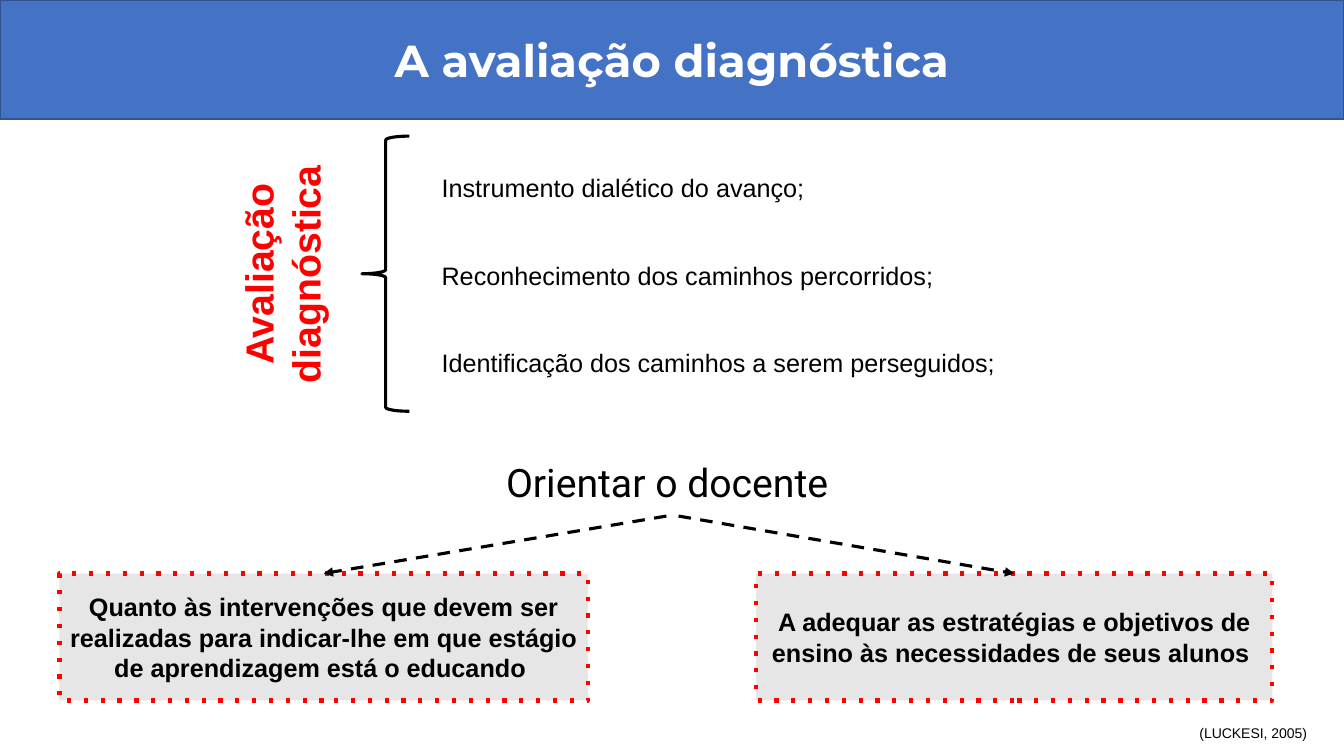
from dataclasses import dataclass

from lxml import etree
from pptx import Presentation
from pptx.dml.color import RGBColor
from pptx.enum.shapes import MSO_CONNECTOR, MSO_SHAPE
from pptx.enum.text import MSO_ANCHOR, MSO_AUTO_SIZE, PP_ALIGN
from pptx.oxml.ns import qn
from pptx.util import Inches, Pt

RECTANGLE, BRACE = MSO_SHAPE.RECTANGLE, MSO_SHAPE.RIGHT_BRACE
STRAIGHT = MSO_CONNECTOR.STRAIGHT
CENTER, JUSTIFY = PP_ALIGN.CENTER, PP_ALIGN.JUSTIFY
TOP, MIDDLE = MSO_ANCHOR.TOP, MSO_ANCHOR.MIDDLE
GROW = MSO_AUTO_SIZE.SHAPE_TO_FIT_TEXT
PADDED, FLUSH = (0.1, 0.05), (0, 0)


@dataclass(frozen=True)
class Theme:
    blue: str = "4472C4"
    navy: str = "31538F"
    red: str = "FF0000"
    gray: str = "E7E6E6"
    black: str = "000000"
    white: str = "FFFFFF"
    title: int = 32
    heading: int = 28
    body: int = 18
    source: int = 10
    stroke: float = 2.25
    border: float = 3


THEME = Theme()


def set_all(target, values):
    for name, value in values.items():
        setattr(target, name, value)


def write(box, text, size, color=THEME.black, font="Arial", bold=False,
          align=CENTER, anchor=TOP, padding=PADDED):
    frame = box.text_frame
    side, edge = map(Inches, padding)
    set_all(frame, {"word_wrap": True, "vertical_anchor": anchor,
                    "margin_left": side, "margin_right": side,
                    "margin_top": edge, "margin_bottom": edge})
    para = frame.paragraphs[0]
    para.alignment = align
    span = para.add_run()
    span.text = text
    set_all(span.font, {"name": font, "size": Pt(size), "bold": bold})
    span.font.color.rgb = RGBColor.from_string(color)


def add_label(page, place, text, size, **style):
    box = page.shapes.add_textbox(*map(Inches, place))
    write(box, text, size, **style)
    box.text_frame.auto_size = GROW
    return box


def add_line_detail(item, tag, **attributes):
    """Append a dash pattern or an arrowhead to the item's outline."""
    outline = item._element.spPr.find(qn("a:ln"))
    etree.SubElement(outline, qn(tag), attributes)


def paint_line(item, color, width):
    item.line.color.rgb = RGBColor.from_string(color)
    item.line.width = Pt(width)


def add_panel(page, kind, place, fill, line, width):
    panel = page.shapes.add_shape(kind, *map(Inches, place))
    panel.shadow.inherit = False
    if fill:
        panel.fill.solid()
        panel.fill.fore_color.rgb = RGBColor.from_string(fill)
    else:
        panel.fill.background()
    paint_line(panel, line, width)
    return panel


def add_goal(page, left, width, text):
    goal = add_panel(page, RECTANGLE, (left, 5.69, width, 1.26),
                     THEME.gray, THEME.red, THEME.border)
    add_line_detail(goal, "a:prstDash", val="dot")
    write(goal, text, THEME.body, bold=True, anchor=MIDDLE)


def add_dashed_arrow(page, start, end):
    arrow = page.shapes.add_connector(STRAIGHT, *map(Inches, start + end))
    paint_line(arrow, THEME.black, THEME.stroke)
    add_line_detail(arrow, "a:prstDash", val="dash")
    add_line_detail(arrow, "a:tailEnd", type="triangle")
    etree.SubElement(arrow._element.spPr, qn("a:effectLst"))


def add_banner(page):
    banner = add_panel(page, RECTANGLE, (0, 0, 13.33, 1.18),
                       THEME.blue, THEME.navy, 1)
    write(banner, "A avaliação diagnóstica", THEME.title, color=THEME.white,
          font="Montserrat", bold=True, anchor=MIDDLE)


def add_braced_list(page, items):
    name = add_label(page, (1.49, 2.2, 2.61, 1.04), "Avaliação diagnóstica",
                     THEME.heading, color=THEME.red, bold=True)
    name.rotation = 270
    for row, text in enumerate(items):
        add_label(page, (4.38, 1.71 + 0.87 * row, 6.67, 0.3), text,
                  THEME.body, align=JUSTIFY, padding=FLUSH)
    brace = add_panel(page, BRACE, (3.59, 1.35, 0.47, 2.73),
                      None, THEME.black, THEME.stroke)
    brace.rotation = 180
    brace.adjustments[0] = 0.083


def main():
    deck = Presentation()
    set_all(deck, {"slide_width": Inches(13.33), "slide_height": Inches(7.5)})
    page = deck.slides.add_slide(deck.slide_layouts[6])

    add_banner(page)
    add_label(page, (11.53, 7.14, 1.8, 0.27), "(LUCKESI, 2005)", THEME.source)
    add_label(page, (4.23, 4.55, 4.87, 0.47), "Orientar o docente ",
              THEME.heading, font="Roboto", padding=FLUSH)
    add_goal(page, 0.59, 5.24,
             "Quanto às intervenções que devem ser realizadas para "
             "indicar-lhe em que estágio de aprendizagem está o educando ")
    add_goal(page, 7.5, 5.12,
             "A adequar as estratégias e objetivos de ensino às "
             "necessidades de seus alunos ")
    add_braced_list(page, ["Instrumento dialético do avanço;",
                           "Reconhecimento dos caminhos percorridos; ",
                           "Identificação dos caminhos a serem perseguidos;"])
    add_dashed_arrow(page, (6.73, 5.12), (10.06, 5.69))
    add_dashed_arrow(page, (6.61, 5.12), (3.21, 5.69))

    deck.save("out.pptx")


if __name__ == "__main__":
    main()
